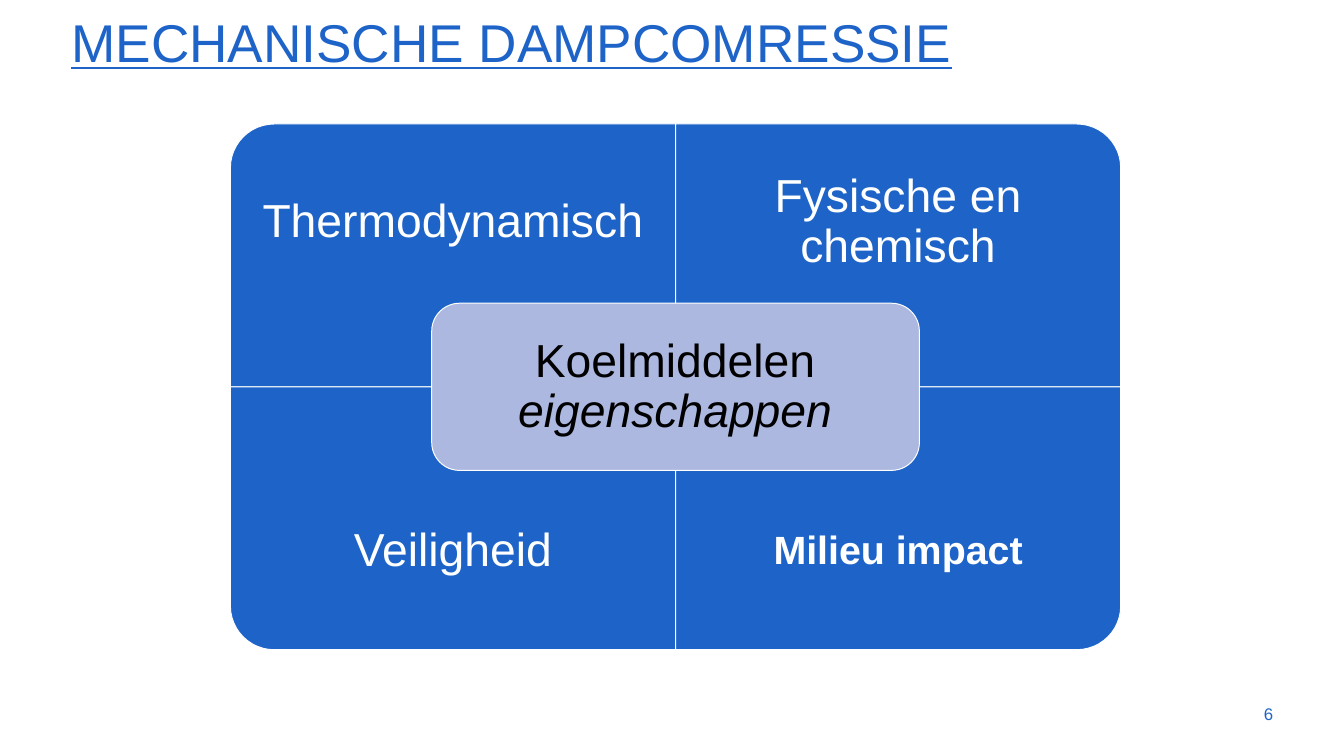
"""Build a slide with four quadrants of refrigerant properties around a central label."""
import dataclasses

import pptx
import pptx.dml.color
import pptx.enum.shapes
import pptx.enum.text
import pptx.shapes.autoshape
import pptx.slide
import pptx.util

EMU_PER_PX = 9144
SHAPES = pptx.enum.shapes.MSO_SHAPE
ANCHOR = pptx.enum.text.MSO_ANCHOR
ALIGN = pptx.enum.text.PP_ALIGN


@dataclasses.dataclass(frozen=True)
class Theme:
    font: str = "Arial"
    blue: str = "1E64C8"
    lilac: str = "ACB8E0"
    white: str = "FFFFFF"
    black: str = "000000"
    title_size: float = 54
    label_size: float = 47
    small_label_size: float = 40
    number_size: float = 17.1
    line_width: float = 1


@dataclasses.dataclass(frozen=True)
class Area:
    left: int
    top: int
    width: int
    height: int


@dataclasses.dataclass(frozen=True)
class Quadrant:
    label: str
    column: int
    row: int
    rotation: int
    size: float
    inset: int = 37
    bold: bool = False


THEME = Theme()
GRID = Area(325, 175, 628, 371)
LABEL_HEIGHT = 278
QUADRANTS = (
    Quadrant("Thermodynamisch", 0, 0, 270, THEME.label_size),
    Quadrant("Fysische en chemisch", 1, 0, 0, THEME.label_size),
    Quadrant("Veiligheid", 0, 1, 180, THEME.label_size),
    Quadrant("Milieu impact", 1, 1, 90, THEME.small_label_size, inset=31, bold=True),
)


def px(length: float) -> pptx.util.Emu:
    return pptx.util.Emu(round(length * EMU_PER_PX))


def rgb(colour: str) -> pptx.dml.color.RGBColor:
    return pptx.dml.color.RGBColor.from_string(colour)


def add_text(page: pptx.slide.Slide, text: str, area: Area, *, size: float, colour: str,
             align: ALIGN = ALIGN.CENTER, anchor: ANCHOR = ANCHOR.MIDDLE,
             inset_x: int = 10, inset_y: int = 5, spacing: float = 0.9,
             bold: bool = False, underline: bool = False, italic_line: str = "") -> None:
    box = page.shapes.add_textbox(px(area.left), px(area.top), px(area.width), px(area.height))
    frame = box.text_frame
    frame.word_wrap = True
    frame.vertical_anchor = anchor
    frame.margin_left = frame.margin_right = px(inset_x)
    frame.margin_top = frame.margin_bottom = px(inset_y)
    para = frame.paragraphs[0]
    para.alignment = align
    para.line_spacing = spacing
    for index, line in enumerate(filter(None, (text, italic_line))):
        if index:
            para.add_line_break()
        span = para.add_run()
        span.text = line
        span.font.name = THEME.font
        span.font.size = pptx.util.Pt(size)
        span.font.color.rgb = rgb(colour)
        span.font.bold = bold
        span.font.underline = underline
        span.font.italic = index > 0


def add_panel(page: pptx.slide.Slide, kind: SHAPES, area: Area, fill: str,
              rotation: int = 0) -> pptx.shapes.autoshape.Shape:
    width, height = area.width, area.height
    if rotation % 180:
        width, height = height, width
    left = area.left + (area.width - width) / 2
    top = area.top + (area.height - height) / 2
    panel = page.shapes.add_shape(kind, px(left), px(top), px(width), px(height))
    panel.rotation = rotation
    panel.shadow.inherit = False
    panel.fill.solid()
    panel.fill.fore_color.rgb = rgb(fill)
    panel.line.color.rgb = rgb(THEME.white)
    panel.line.width = pptx.util.Pt(THEME.line_width)
    return panel


def add_quadrant(page: pptx.slide.Slide, quadrant: Quadrant) -> None:
    left = GRID.left + quadrant.column * GRID.width
    top = GRID.top + quadrant.row * GRID.height
    add_panel(page, SHAPES.ROUND_1_RECTANGLE, Area(left, top, GRID.width, GRID.height),
              THEME.blue, quadrant.rotation)
    label_top = top + quadrant.row * (GRID.height - LABEL_HEIGHT)
    add_text(page, quadrant.label, Area(left, label_top, GRID.width, LABEL_HEIGHT),
             size=quadrant.size, colour=THEME.white, bold=quadrant.bold,
             inset_x=quadrant.inset, inset_y=quadrant.inset)


def main() -> None:
    deck = pptx.Presentation()
    deck.slide_width, deck.slide_height = px(1896), px(1067)
    page = deck.slides.add_slide(deck.slide_layouts[6])
    add_text(page, "MECHANISCHE DAMPCOMRESSIE", Area(91, 15, 1718, 94),
             size=THEME.title_size, colour=THEME.blue, align=ALIGN.LEFT,
             anchor=ANCHOR.BOTTOM, underline=True)
    add_text(page, "6", Area(1705, 979, 101, 57), size=THEME.number_size,
             colour=THEME.blue, align=ALIGN.RIGHT, spacing=1.0)
    for quadrant in QUADRANTS:
        add_quadrant(page, quadrant)
    add_panel(page, SHAPES.ROUNDED_RECTANGLE, Area(609, 428, 688, 236), THEME.lilac)
    add_text(page, "Koelmiddelen", Area(620, 440, 665, 213), italic_line="eigenschappen",
             size=THEME.label_size, colour=THEME.black, inset_x=20, inset_y=20)
    deck.save("out.pptx")


if __name__ == "__main__":
    main()
